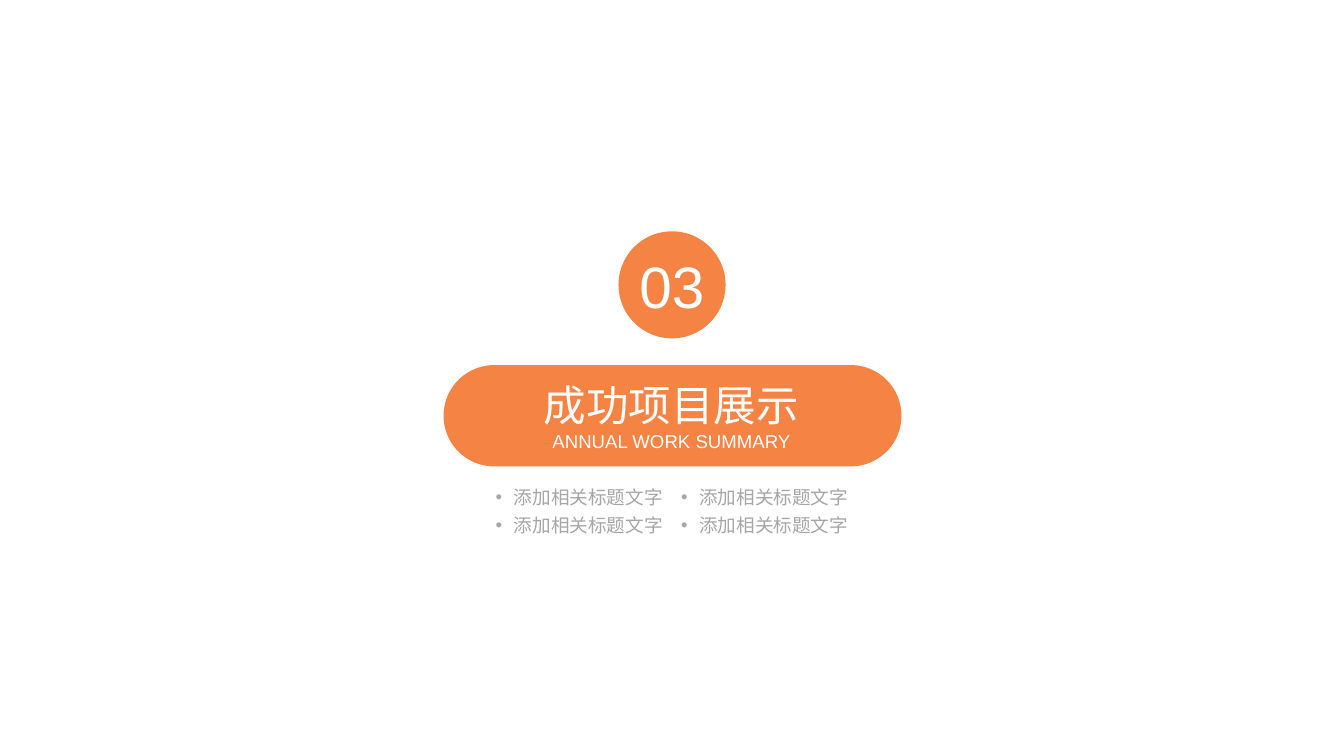
from lxml.etree import SubElement
from pptx import Presentation
from pptx.dml.color import RGBColor
from pptx.enum.shapes import MSO_SHAPE
from pptx.enum.text import MSO_ANCHOR, MSO_AUTO_SIZE, PP_ALIGN
from pptx.oxml.ns import qn
from pptx.util import Inches, Pt

ORANGE, WHITE, GREY = "F58344", "FFFFFF", "A6A6A6"
FONT = "Arial"
NUMBER = "03"
TITLE_SPANS = [("成功项目展示", 32), ("ANNUAL WORK SUMMARY", 14)]
TOPICS = [
    ["添加相关标题文字", "添加相关标题文字"],
    ["添加相关标题文字", "添加相关标题文字"],
]
TOPIC_LEFT, TOPIC_TOP = 5.18, 5.08
COLUMN_STEP, ROW_STEP = 1.94, 0.3


def color(hex_string):
    return RGBColor.from_string(hex_string)


def add_badge(page, kind, left, top, width, height):
    badge = page.shapes.add_shape(
        kind, Inches(left), Inches(top), Inches(width), Inches(height))
    badge.shadow.inherit = False
    badge.fill.solid()
    badge.fill.fore_color.rgb = color(ORANGE)
    badge.line.fill.background()
    return badge


def prepare_frame(box, anchor, wrap):
    """Remove margins and return the centred first paragraph."""
    frame = box.text_frame
    frame.margin_left = frame.margin_right = 0
    frame.margin_top = frame.margin_bottom = 0
    frame.vertical_anchor = anchor
    frame.word_wrap = wrap
    frame.auto_size = MSO_AUTO_SIZE.NONE
    para = frame.paragraphs[0]
    para.alignment = PP_ALIGN.CENTER
    return para


def add_span(para, text, size, hex_string):
    span = para.add_run()
    span.text = text
    span.font.name = FONT
    span.font.size = Pt(size)
    span.font.color.rgb = color(hex_string)


def add_bullet(para, indent):
    properties = para._p.get_or_add_pPr()
    properties.set("marL", str(Inches(indent)))
    properties.set("indent", str(-Inches(indent)))
    SubElement(properties, qn("a:buFont"), typeface=FONT)
    SubElement(properties, qn("a:buChar"), char="•")


def main():
    deck = Presentation()
    deck.slide_width, deck.slide_height = Inches(14.06), Inches(7.91)
    page = deck.slides.add_slide(deck.slide_layouts[5])

    banner = add_badge(page, MSO_SHAPE.ROUNDED_RECTANGLE, 4.64, 3.82, 4.79, 1.06)
    banner.adjustments[0] = 0.5
    circle = add_badge(page, MSO_SHAPE.OVAL, 6.47, 2.42, 1.12, 1.12)
    add_span(prepare_frame(circle, MSO_ANCHOR.MIDDLE, True), NUMBER, 44, WHITE)

    title = page.shapes.title
    title.left, title.top = Inches(5.64), Inches(3.96)
    title.width, title.height = Inches(2.77), Inches(0.77)
    title_para = prepare_frame(title, MSO_ANCHOR.MIDDLE, True)
    for text, size in TITLE_SPANS:
        add_span(title_para, text, size, WHITE)
    # The title belongs in front of the banner
    title.element.getparent().append(title.element)

    for row, topics in enumerate(TOPICS):
        for column, topic in enumerate(topics):
            box = page.shapes.add_textbox(
                Inches(TOPIC_LEFT + column * COLUMN_STEP),
                Inches(TOPIC_TOP + row * ROW_STEP), Inches(1.76), Inches(0.24))
            para = prepare_frame(box, MSO_ANCHOR.TOP, False)
            add_bullet(para, 0.19)
            add_span(para, topic, 14, GREY)

    deck.save("out.pptx")


if __name__ == "__main__":
    main()
